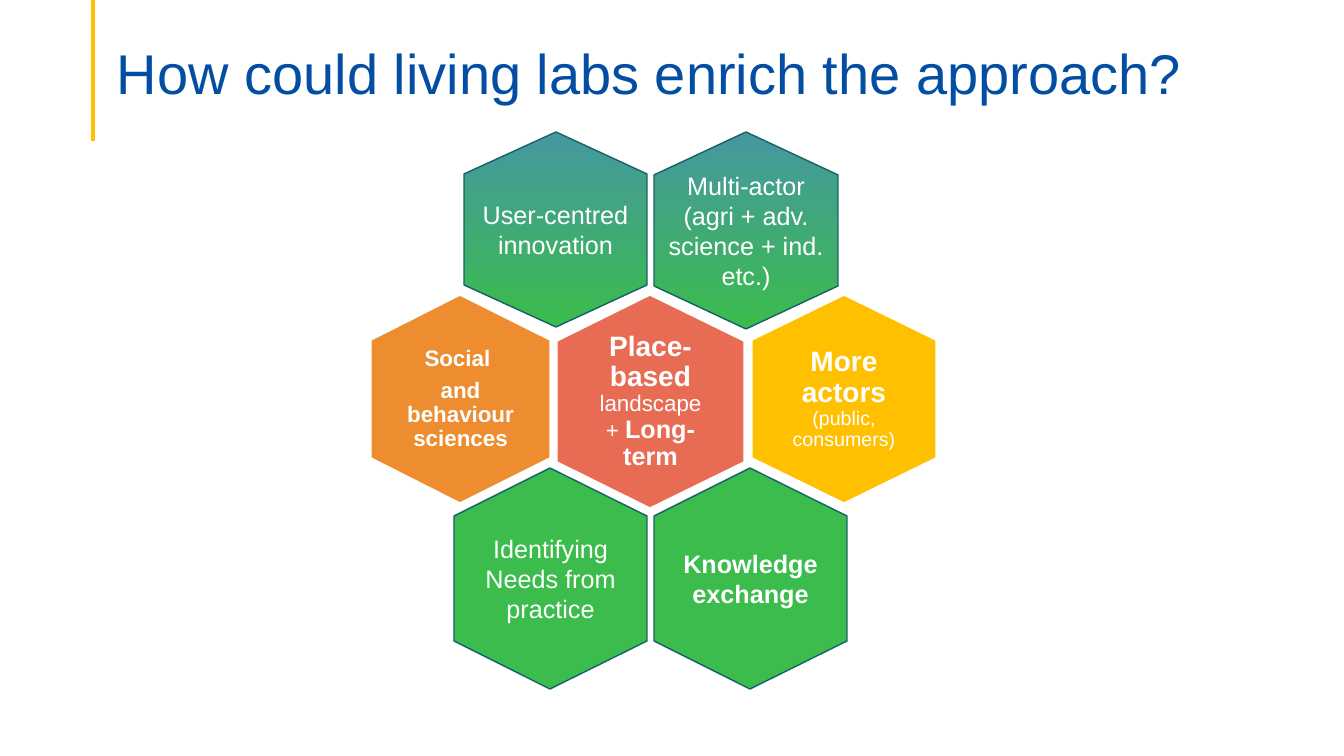
from dataclasses import dataclass

from lxml.etree import SubElement
from pptx import Presentation
from pptx.dml.color import RGBColor as Rgb
from pptx.enum.text import MSO_ANCHOR as Anchor, MSO_AUTO_SIZE as AutoSize, PP_ALIGN as Align
from pptx.enum.shapes import MSO_CONNECTOR as Connector
from pptx.oxml.ns import qn
from pptx.util import Pt

PX = 914400 / 100.8  # EMU per px


@dataclass(frozen=True)
class Theme:
    font: str = "Arial"
    title: str = "034EA2"
    text: str = "FFFFFF"
    gold: str = "FFC000"
    orange: str = "ED8D2F"
    coral: str = "E76C53"
    green: str = "3BBC4C"
    teal: str = "4597A0"
    edge: str = "166267"
    gap: str = "FFFFFF"
    title_size: int = 40
    big: int = 20
    normal: int = 18
    small: int = 16
    note: int = 14


THEME = Theme()
SHOULDER = 0.2175  # depth of a hexagon's point as a share of its height
SPACE_AFTER = 0.35  # share of the type size


def px(length):
    return round(length * PX)


def add_run(paragraph, words, size, bold, color):
    run = paragraph.add_run()
    run.text = words
    run.font.name = THEME.font
    run.font.size = Pt(size)
    run.font.bold = bold
    run.font.color.rgb = Rgb.from_string(color)


def add_title(slide, words):
    title = slide.shapes.title
    title.left, title.top, title.width, title.height = map(px, (107, 20, 1159, 87))
    frame = title.text_frame
    frame.auto_size = AutoSize.NONE
    frame.word_wrap = True
    frame.vertical_anchor = Anchor.BOTTOM
    frame.margin_left = frame.margin_right = px(10)
    frame.margin_top, frame.margin_bottom = px(5), 0
    heading = frame.paragraphs[0]
    heading.alignment = Align.LEFT
    heading.line_spacing = 0.9
    add_run(heading, words, THEME.title_size, False, THEME.title)


def add_accent(slide, x, bottom):
    accent = slide.shapes.add_connector(Connector.STRAIGHT, px(x), 0, px(x), px(bottom))
    accent.line.color.rgb = Rgb.from_string(THEME.gold)
    accent.line.width = Pt(2.25)
    SubElement(accent._element.spPr, qn("a:effectLst"))


def add_hexagon(slide, box, colors, edge):
    """Draw a pointed-top hexagon; two colours give a vertical gradient."""
    left, top, width, height = box
    middle, right, bottom = left + width / 2, left + width, top + height
    upper, lower = top + SHOULDER * height, bottom - SHOULDER * height
    outline = slide.shapes.build_freeform(middle, top, scale=PX)
    outline.add_line_segments(
        [(right, upper), (right, lower), (middle, bottom), (left, lower), (left, upper)])
    hexagon = outline.convert_to_shape()
    hexagon.shadow.inherit = False
    if len(colors) == 2:
        hexagon.fill.gradient()
        hexagon.fill.gradient_angle = 270
        for stop, color in zip(hexagon.fill.gradient_stops, colors):
            stop.color.rgb = Rgb.from_string(color)
    else:
        hexagon.fill.solid()
        hexagon.fill.fore_color.rgb = Rgb.from_string(colors[0])
    hexagon.line.color.rgb = Rgb.from_string(edge)
    hexagon.line.width = Pt(1)
    return hexagon


def write_label(hexagon, paragraphs, margins, tight):
    frame = hexagon.text_frame
    frame.word_wrap = True
    frame.vertical_anchor = Anchor.MIDDLE
    frame.margin_left = frame.margin_right = px(margins[0])
    frame.margin_top = frame.margin_bottom = px(margins[1])
    for index, runs in enumerate(paragraphs):
        line = frame.add_paragraph() if index else frame.paragraphs[0]
        line.alignment = Align.CENTER
        if tight:
            line.line_spacing = 0.9
            line.space_after = Pt(SPACE_AFTER * runs[0][1])
        for words, size, bold in runs:
            add_run(line, words, size, bold, THEME.text)


def add_outer_cell(slide, box, colors, words, bold=False):
    hexagon = add_hexagon(slide, box, colors, THEME.edge)
    write_label(hexagon, [[(words, THEME.normal, bold)]], (10, 5), tight=False)


def add_middle_cell(slide, box, color, paragraphs, margins=(30, 34)):
    hexagon = add_hexagon(slide, box, [color], THEME.gap)
    write_label(hexagon, paragraphs, margins, tight=True)


def main():
    deck = Presentation()
    deck.slide_width, deck.slide_height = px(1344), px(756)
    slide = deck.slides.add_slide(deck.slide_layouts[5])

    # Heading
    add_accent(slide, 93, 141)
    add_title(slide, "How could living labs enrich the approach?")

    # Top row
    blend = [THEME.teal, THEME.green]
    add_outer_cell(slide, (654, 132, 184, 197), blend,
                   "Multi-actor (agri + adv. science + ind. etc.)")
    add_outer_cell(slide, (464, 132, 183, 195), blend, "User-centred innovation")

    # Middle row
    add_middle_cell(slide, (557, 295, 187, 213), THEME.coral,
                    [[("Place-based ", THEME.big, True),
                      ("landscape + ", THEME.small, False),
                      ("Long-term", THEME.normal, True)]], (35, 40))
    add_middle_cell(slide, (752, 295, 184, 208), THEME.gold,
                    [[("More actors ", THEME.big, True),
                      ("(public, consumers)", THEME.note, False)]])
    add_middle_cell(slide, (371, 295, 179, 208), THEME.orange,
                    [[("Social ", THEME.small, True)],
                     [("and behaviour sciences", THEME.small, True)]])

    # Bottom row
    add_outer_cell(slide, (454, 468, 193, 221), [THEME.green],
                   "Identifying Needs from practice")
    add_outer_cell(slide, (654, 468, 193, 221), [THEME.green], "Knowledge exchange", bold=True)

    deck.save("out.pptx")


if __name__ == "__main__":
    main()
